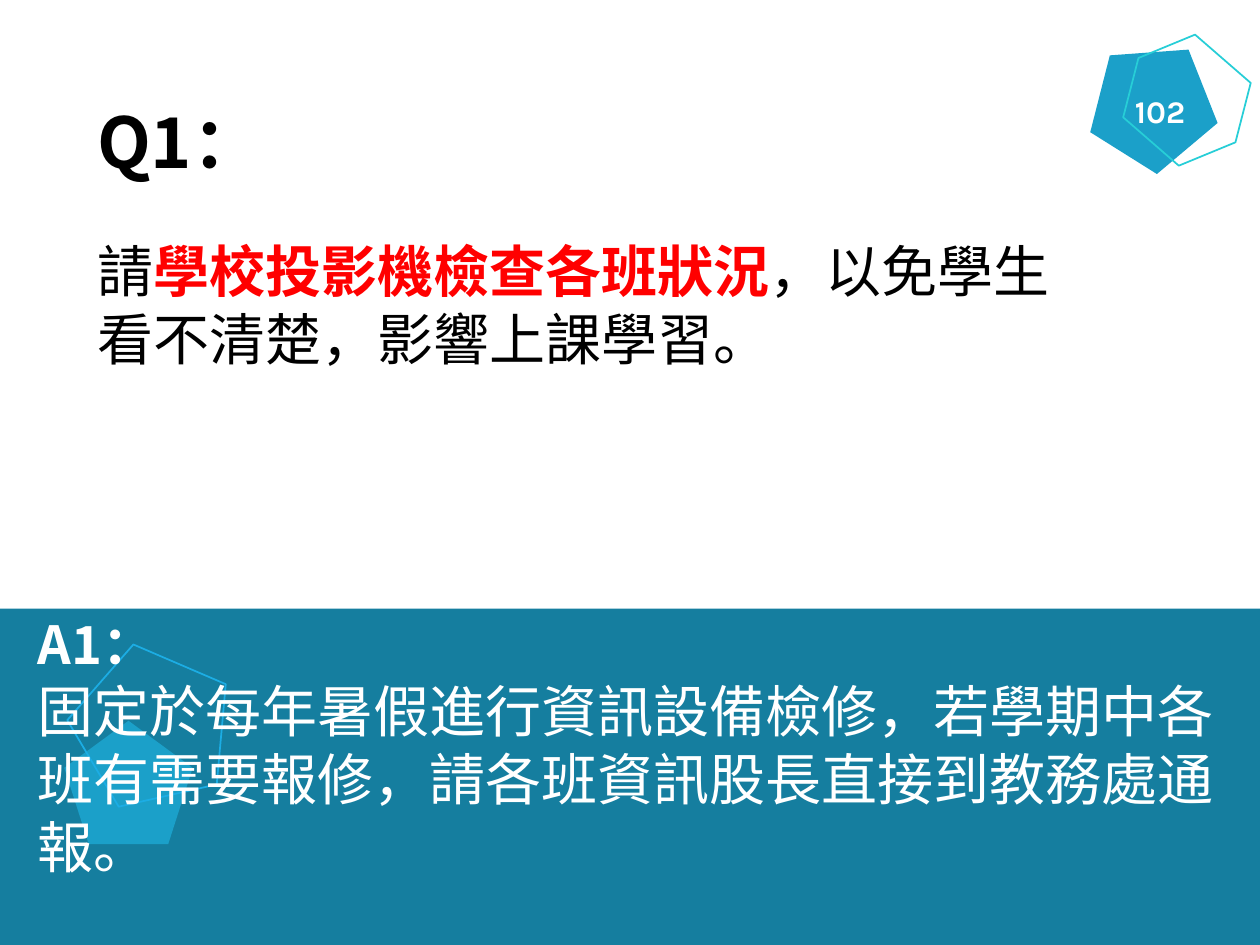
from pptx import Presentation
from pptx.dml.color import RGBColor
from pptx.enum.shapes import MSO_SHAPE
from pptx.enum.text import MSO_ANCHOR, MSO_AUTO_SIZE, PP_ALIGN
from pptx.util import Inches, Pt

RECTANGLE = MSO_SHAPE.RECTANGLE
PENTAGON = MSO_SHAPE.REGULAR_PENTAGON
HEXAGON = MSO_SHAPE.HEXAGON
TOP = MSO_ANCHOR.TOP
LEFT = PP_ALIGN.LEFT
NO_AUTOFIT = MSO_AUTO_SIZE.NONE

BLACK = RGBColor(0x00, 0x00, 0x00)
WHITE = RGBColor(0xFF, 0xFF, 0xFF)
RED = RGBColor(0xFF, 0x00, 0x00)
DEEP_TEAL = RGBColor(0x15, 0x7E, 0x9F)
BLUE = RGBColor(0x1B, 0xA0, 0xC9)
SKY = RGBColor(0x1C, 0xAD, 0xE4)
AQUA = RGBColor(0x27, 0xCE, 0xD7)

HEADING_FONT = "Noto Sans CJK SC"
BODY_FONT = "Calibri"
NUMBER_FONT = "Karla"
BODY_SIZE = 32
BODY_LEADING = 39


def add_figure(page, kind, box, fill=None, line=None, rotation=0):
    """Add a flat preset shape, filled or outlined."""
    figure = page.shapes.add_shape(kind, *map(Inches, box))
    figure.shadow.inherit = False
    figure.rotation = rotation
    if fill is None:
        figure.fill.background()
    else:
        figure.fill.solid()
        figure.fill.fore_color.rgb = fill
    if line is None:
        figure.line.fill.background()
    else:
        figure.line.color.rgb = line
        figure.line.width = Pt(1)


def add_span(para, text, font, size, color, bold=False):
    """Add one formatted run to a paragraph."""
    span = para.add_run()
    span.text = text
    span.font.name = font
    span.font.size = Pt(size)
    span.font.color.rgb = color
    span.font.bold = bold


def prepare_frame(holder, wrap=True):
    """Align a text frame to the top left and return it."""
    frame = holder.text_frame
    frame.auto_size = NO_AUTOFIT
    frame.word_wrap = wrap
    frame.vertical_anchor = TOP
    frame.paragraphs[0].alignment = LEFT
    return frame


def add_heading_and_body(frame, heading, size, leading, gap, spans, color):
    """Write a bold label followed by a body paragraph of (text, colour, bold) spans."""
    label = frame.paragraphs[0]
    label.line_spacing = Pt(leading)
    add_span(label, heading, HEADING_FONT, size, color, True)
    body = frame.add_paragraph()
    body.alignment = LEFT
    body.line_spacing = Pt(BODY_LEADING)
    body.space_before = Pt(gap)
    for text, span_color, bold in spans:
        add_span(body, text, BODY_FONT, BODY_SIZE, span_color, bold)


def add_question(page, box):
    """Place the question in the title placeholder."""
    title = page.shapes.title
    title.left, title.top, title.width, title.height = map(Inches, box)
    spans = [
        ("請", BLACK, False),
        ("學校投影機檢查各班狀況", RED, True),
        ("，以免學生看不清楚，影響上課學習。", BLACK, False),
    ]
    add_heading_and_body(prepare_frame(title), "Q1：", 40, 52, 30, spans, BLACK)


def add_answer(page, box):
    """Place the answer band, its pentagons and the answer text."""
    left, top, width, height = box
    add_figure(page, RECTANGLE, box, fill=DEEP_TEAL)
    add_figure(page, PENTAGON, (left + 0.51, top + 0.89, 1.02, 0.98), fill=BLUE)
    add_figure(page, PENTAGON, (left + 0.55, top + 0.27, 1.29, 1.23),
               line=SKY, rotation=347.2)
    answer = page.shapes.add_textbox(
        Inches(left + 0.2), Inches(top - 0.05), Inches(width - 0.2), Inches(2.22))
    spans = [(
        "固定於每年暑假進行資訊設備檢修，若學期中各班有需要報修，請各班資訊股長直接到教務處通報。",
        WHITE, False)]
    add_heading_and_body(prepare_frame(answer), "A1：", 30, 38, 0, spans, WHITE)


def add_page_badge(page, box):
    """Place the page number on its pentagon and hexagon."""
    left, top, width, height = box
    add_figure(page, PENTAGON, (left, top, width, height), fill=BLUE, rotation=32.1)
    number = page.shapes.add_textbox(
        Inches(left + 0.24), Inches(top + 0.36), Inches(0.64), Inches(0.4))
    frame = prepare_frame(number, wrap=False)
    add_span(frame.paragraphs[0], "102", NUMBER_FONT, 18, WHITE, True)
    add_figure(page, HEXAGON, (left + 0.24, top + 0.04, 1.02, 0.87),
               line=AQUA, rotation=41)


def main():
    """Build and save the deck."""
    deck = Presentation()
    deck.slide_width, deck.slide_height = Inches(10), Inches(7.5)
    page = deck.slides.add_slide(deck.slide_layouts.get_by_name("Title Only"))
    add_question(page, (0.67, 0.68, 7.95, 2.32))
    add_answer(page, (0, 4.83, 10, 2.67))
    add_page_badge(page, (8.67, 0.32, 1.01, 0.97))
    deck.save("out.pptx")


if __name__ == "__main__":
    main()
